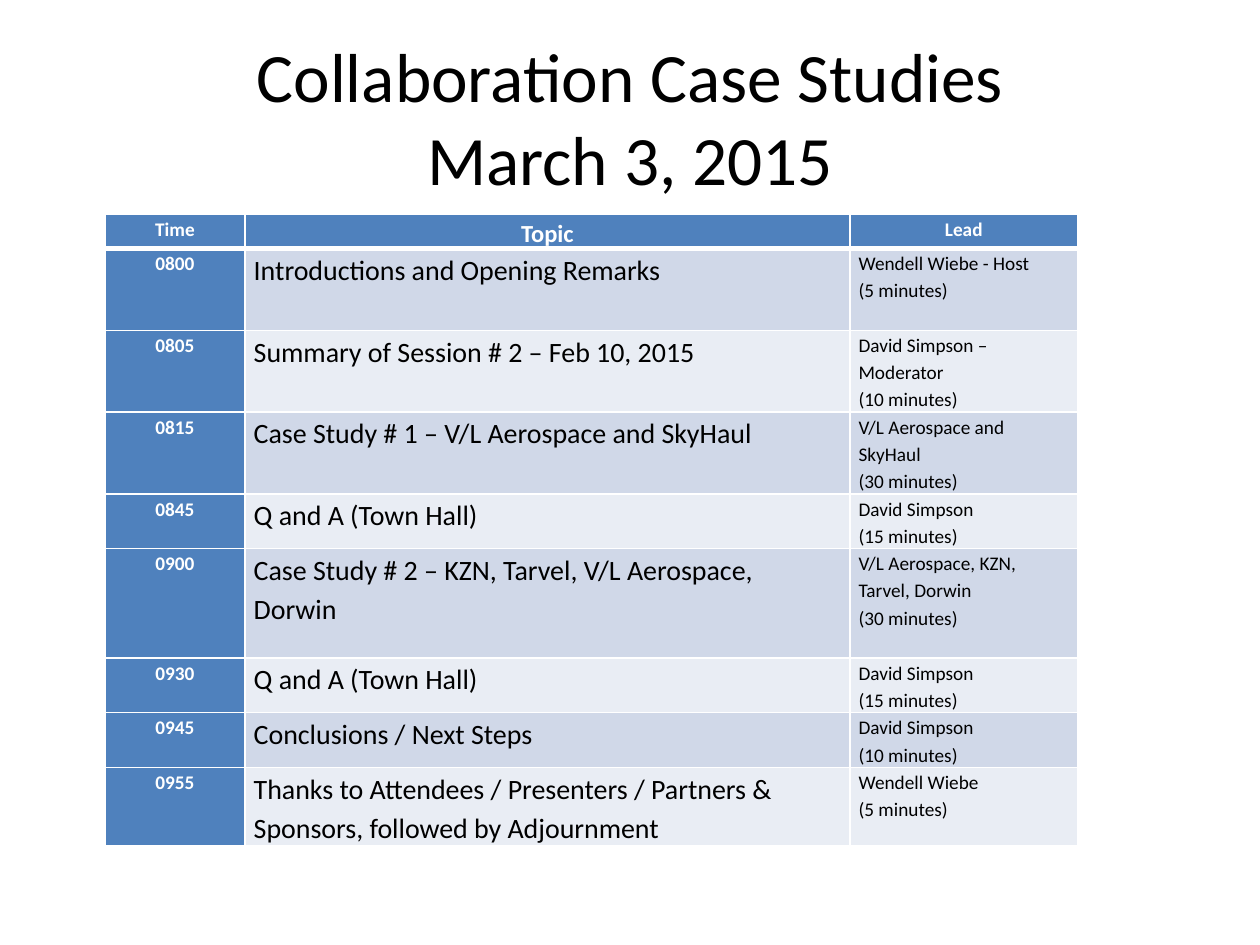
from dataclasses import dataclass

from lxml import etree
from pptx import Presentation
from pptx.dml.color import RGBColor
from pptx.enum.text import MSO_ANCHOR, PP_ALIGN
from pptx.oxml.ns import qn
from pptx.util import Pt

LEFT, CENTER = PP_ALIGN.LEFT, PP_ALIGN.CENTER
MIDDLE = MSO_ANCHOR.MIDDLE
BLANK_LAYOUT = 6


@dataclass(frozen=True)
class Theme:
    font: str = "Calibri"
    text: str = "000000"
    inverse: str = "FFFFFF"
    accent: str = "4F81BD"
    bands: tuple = ("D0D8E8", "E9EDF4")
    border: str = "FFFFFF"
    title_size: float = 39.6
    header_size: float = 14
    topic_size: float = 16
    small_size: float = 11
    line_spacing: float = 1.15
    border_width: float = 1
    header_rule: float = 3


TITLE = "Collaboration Case Studies\nMarch 3, 2015"
HEADER = ("Time", "Topic", "Lead")
COLUMN_WIDTHS = (80, 345.6, 130.3)
HEADER_HEIGHT = 19.1
# Time, topic, lead lines, row height
AGENDA = (
    ("0800", "Introductions and Opening Remarks",
     ("Wendell Wiebe - Host", "(5 minutes)"), 46.8),
    ("0805", "Summary of Session # 2 – Feb 10, 2015",
     ("David Simpson –Moderator", "(10 minutes)"), 46.8),
    ("0815", "Case Study # 1 – V/L Aerospace and SkyHaul",
     ("V/L Aerospace and", "SkyHaul", "(30 minutes)"), 46.8),
    ("0845", "Q and A (Town Hall)", ("David Simpson", "(15 minutes)"), 31.2),
    ("0900", "Case Study # 2 – KZN, Tarvel, V/L Aerospace, Dorwin",
     ("V/L Aerospace, KZN, Tarvel, Dorwin", "(30 minutes)"), 62.6),
    ("0930", "Q and A (Town Hall)", ("David Simpson", "(15 minutes)"), 31.2),
    ("0945", "Conclusions / Next Steps", ("David Simpson", "(10 minutes)"), 31.2),
    ("0955", "Thanks to Attendees / Presenters / Partners & Sponsors, "
     "followed by Adjournment", ("Wendell Wiebe", "(5 minutes)"), 44.8),
)


class SlideBuilder:
    def __init__(self, slide, theme):
        self.slide = slide
        self.theme = theme

    def style(self, para, size, color, bold=False, align=LEFT):
        para.alignment = align
        font = para.font
        font.name, font.size, font.bold = self.theme.font, Pt(size), bold
        font.color.rgb = RGBColor.from_string(color)

    def title(self, text, left, top, width, height):
        box = self.slide.shapes.add_textbox(Pt(left), Pt(top), Pt(width), Pt(height))
        frame = box.text_frame
        frame.word_wrap = True
        frame.vertical_anchor = MIDDLE
        para = frame.paragraphs[0]
        para.text = text
        self.style(para, self.theme.title_size, self.theme.text, align=CENTER)

    def borders(self, cell, top, bottom):
        """Line all four sides; the top and bottom widths are given in points."""
        side = self.theme.border_width
        widths = {"a:lnL": side, "a:lnR": side, "a:lnT": top, "a:lnB": bottom}
        properties = cell._tc.get_or_add_tcPr()
        for index, (tag, width) in enumerate(widths.items()):
            line = etree.Element(qn(tag), w=str(Pt(width)))
            fill = etree.SubElement(line, qn("a:solidFill"))
            etree.SubElement(fill, qn("a:srgbClr"), val=self.theme.border)
            properties.insert(index, line)

    def cell(self, cell, lines, fill, **text_style):
        cell.margin_left = cell.margin_right = Pt(5)
        cell.margin_top = cell.margin_bottom = Pt(0)
        cell.fill.solid()
        cell.fill.fore_color.rgb = RGBColor.from_string(fill)
        cell.text_frame.text = "\n".join(lines)
        for para in cell.text_frame.paragraphs:
            para.line_spacing = self.theme.line_spacing
            self.style(para, **text_style)

    def agenda(self, left, top):
        theme = self.theme
        heights = [HEADER_HEIGHT] + [row[-1] for row in AGENDA]
        table = self.slide.shapes.add_table(
            len(heights), len(COLUMN_WIDTHS), Pt(left), Pt(top),
            Pt(sum(COLUMN_WIDTHS)), Pt(sum(heights))).table
        for column, width in zip(table.columns, COLUMN_WIDTHS):
            column.width = Pt(width)
        for row, height in zip(table.rows, heights):
            row.height = Pt(height)

        label = dict(color=theme.inverse, bold=True, align=CENTER)
        header_sizes = (theme.small_size, theme.header_size, theme.small_size)
        for column, (name, size) in enumerate(zip(HEADER, header_sizes)):
            self.cell(table.cell(0, column), [name], theme.accent, size=size, **label)
        for row, (time, topic, lead, _) in enumerate(AGENDA, start=1):
            band = theme.bands[(row - 1) % 2]
            self.cell(table.cell(row, 0), [time], theme.accent,
                      size=theme.small_size, **label)
            self.cell(table.cell(row, 1), [topic], band,
                      size=theme.topic_size, color=theme.text)
            self.cell(table.cell(row, 2), lead, band,
                      size=theme.small_size, color=theme.text)

        for index, row in enumerate(table.rows):
            above = theme.header_rule if index == 1 else theme.border_width
            below = theme.header_rule if index == 0 else theme.border_width
            for cell in row.cells:
                self.borders(cell, above, below)


def main():
    deck = Presentation()
    deck.slide_width, deck.slide_height = Pt(720), Pt(540)
    slide = deck.slides.add_slide(deck.slide_layouts[BLANK_LAYOUT])
    builder = SlideBuilder(slide, Theme())
    builder.title(TITLE, 36, 21.6, 648, 90)
    builder.agenda(60, 122.6)
    deck.save("out.pptx")


if __name__ == "__main__":
    main()
